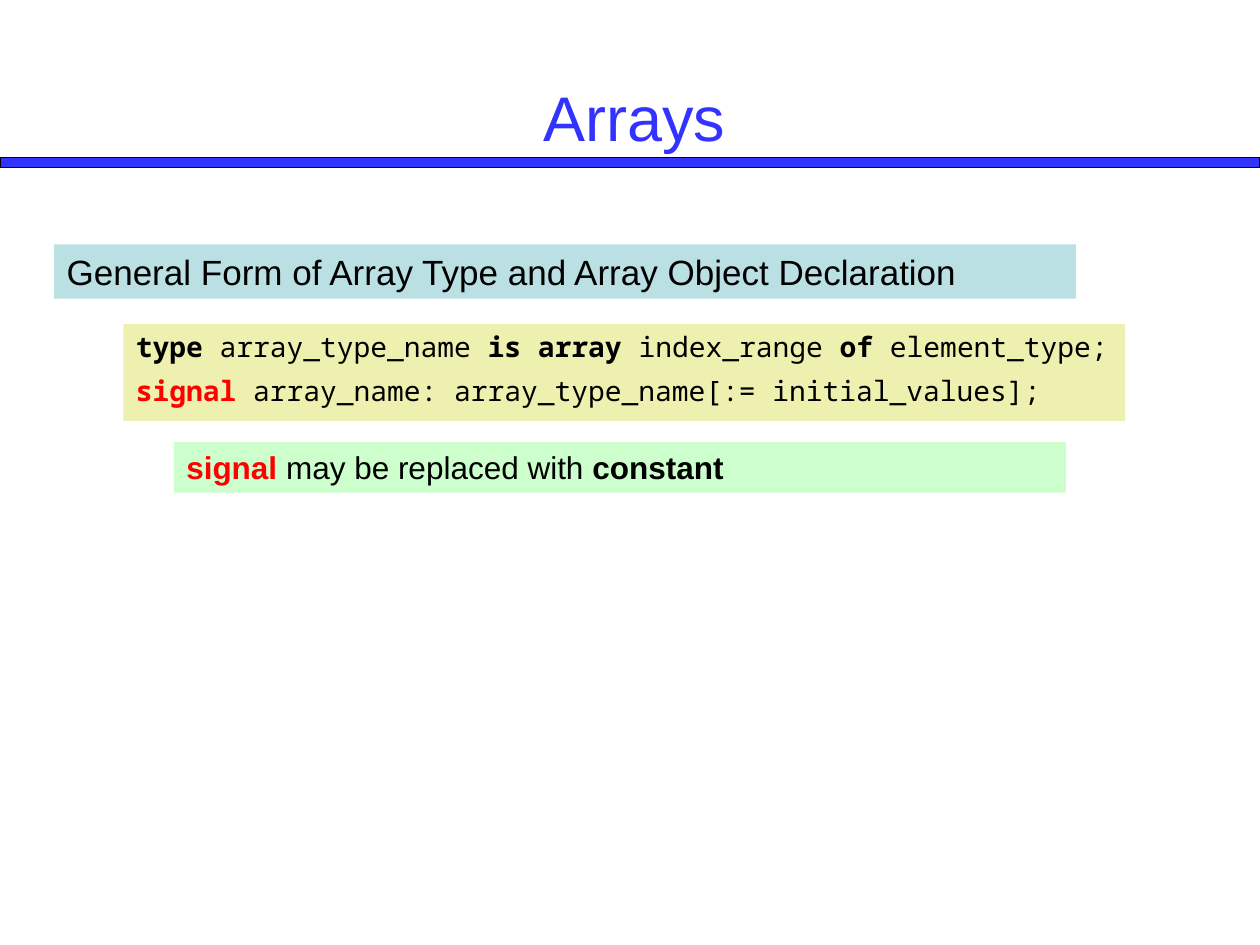
from dataclasses import dataclass

import pptx
import pptx.dml.color
import pptx.enum.shapes
import pptx.enum.text
import pptx.util
from pptx.util import Inches

COLORS = {
    "blue": "3333FF",
    "black": "000000",
    "red": "FF0000",
    "teal": "BBE0E3",
    "yellow": "EDF0AE",
    "green": "CCFFCC",
}


@dataclass
class Span:
    text: str
    bold: bool = False
    color: str = "black"


@dataclass
class Panel:
    left: float
    top: float
    width: float
    height: float
    fill: str
    font: str
    size: int
    lines: list[list[Span]]


SIGNAL = Span("signal", True, "red")

PANELS = [
    Panel(0.98, 2.57, 7.95, 0.77, "yellow", "Noto Sans Mono", 16, [
        [
            Span("type", True),
            Span(" array_type_name "),
            Span("is array", True),
            Span(" index_range "),
            Span("of", True),
            Span(" element_type;"),
        ],
        [SIGNAL, Span(" array_name: array_type_name[:= initial_values];")],
    ]),
    Panel(0.43, 1.94, 8.11, 0.43, "teal", "Arial", 20, [
        [Span("General Form of Array Type and Array Object Declaration")],
    ]),
    Panel(1.38, 3.51, 7.08, 0.4, "green", "Arial", 18, [
        [SIGNAL, Span(" may be replaced with "), Span("constant", True)],
    ]),
]


def rgb(name: str) -> pptx.dml.color.RGBColor:
    return pptx.dml.color.RGBColor.from_string(COLORS[name])


def format_run(run, font: str, size: int, color: str, bold: bool = False) -> None:
    run.font.name = font
    run.font.size = pptx.util.Pt(size)
    run.font.bold = bold
    run.font.color.rgb = rgb(color)


def add_box(page, left: float, top: float, width: float, height: float, fill: str):
    box = page.shapes.add_shape(
        pptx.enum.shapes.MSO_SHAPE.RECTANGLE,
        Inches(left), Inches(top), Inches(width), Inches(height),
    )
    box.shadow.inherit = False
    box.fill.solid()
    box.fill.fore_color.rgb = rgb(fill)
    return box


def add_rule(page) -> None:
    rule = add_box(page, 0, 1.25, 10, 0.08, "blue")
    rule.line.color.rgb = rgb("black")
    rule.line.width = pptx.util.Pt(0.75)


def set_title(page, text: str) -> None:
    title = page.shapes.title
    title.left, title.top = Inches(0.42), Inches(0.3)
    title.width, title.height = Inches(9.23), Inches(1.25)
    frame = title.text_frame
    frame.text = text
    frame.vertical_anchor = pptx.enum.text.MSO_ANCHOR.MIDDLE
    para = frame.paragraphs[0]
    para.alignment = pptx.enum.text.PP_ALIGN.CENTER
    format_run(para.runs[0], "Arial", 36, "blue")


def add_panel(page, panel: Panel) -> None:
    box = add_box(page, panel.left, panel.top, panel.width, panel.height, panel.fill)
    box.line.fill.background()
    frame = box.text_frame
    frame.word_wrap = True
    frame.vertical_anchor = pptx.enum.text.MSO_ANCHOR.TOP
    frame.auto_size = pptx.enum.text.MSO_AUTO_SIZE.SHAPE_TO_FIT_TEXT
    for index, spans in enumerate(panel.lines):
        para = frame.add_paragraph() if index else frame.paragraphs[0]
        para.alignment = pptx.enum.text.PP_ALIGN.LEFT
        if index:
            para.space_before = pptx.util.Pt(5.5)
        for span in spans:
            run = para.add_run()
            run.text = span.text
            format_run(run, panel.font, panel.size, span.color, span.bold)


def main() -> None:
    deck = pptx.Presentation()
    deck.slide_width, deck.slide_height = Inches(10), Inches(7.5)
    page = deck.slides.add_slide(deck.slide_layouts.get_by_name("Title Only"))
    add_rule(page)
    set_title(page, "Arrays")
    for panel in PANELS:
        add_panel(page, panel)
    deck.save("out.pptx")


if __name__ == "__main__":
    main()
